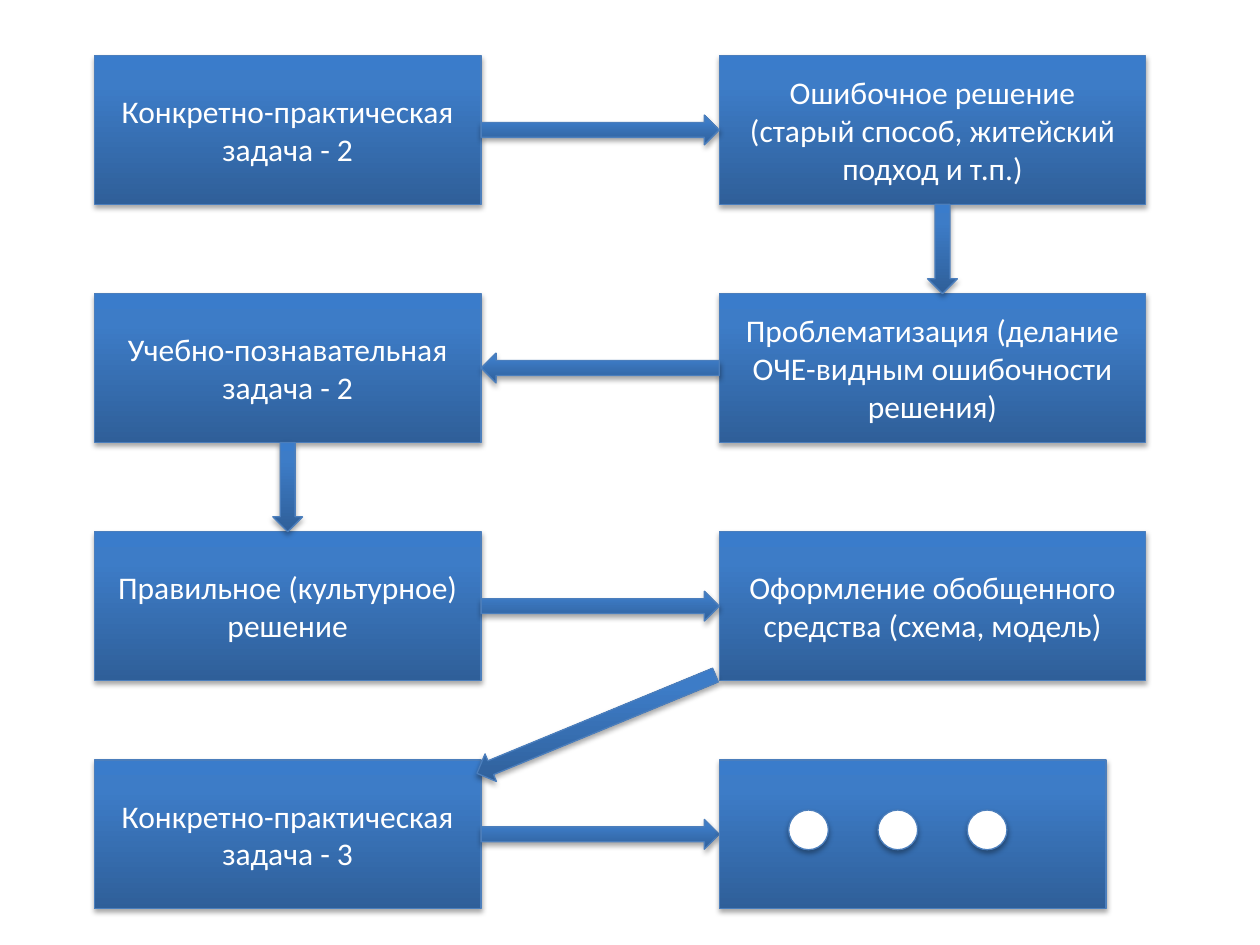
"""Build a slide with the cycle of learning tasks as boxes joined by block arrows."""
from dataclasses import dataclass

from lxml.etree import SubElement
from pptx import Presentation
from pptx.dml.color import RGBColor
from pptx.enum.shapes import MSO_SHAPE as Preset
from pptx.enum.text import MSO_ANCHOR as Anchor, PP_ALIGN as Align
from pptx.oxml import parse_xml
from pptx.oxml.ns import nsdecls, qn
from pptx.util import Cm, Pt

WHITE = RGBColor(0xFF, 0xFF, 0xFF)
BLACK = RGBColor(0x00, 0x00, 0x00)
OUTLINE = RGBColor(0x4B, 0x7E, 0xBC)
GRADIENT = (
    (0, RGBColor(0x2F, 0x5F, 0x99)),
    (80, RGBColor(0x3D, 0x7C, 0xC7)),
    (100, RGBColor(0x3A, 0x7C, 0xCB)),
)
FONT = "Calibri"
LEFT, RIGHT = 1.9, 14.5
NARROW, WIDE, BOX_HEIGHT = 7.8, 8.6, 3.0
ROWS = (1.12, 5.92, 10.72, 15.32)
THICKNESS = 0.6
GAP_LEFT = LEFT + NARROW
GAP_WIDTH = RIGHT - GAP_LEFT
DROP = ROWS[1] - ROWS[0] - BOX_HEIGHT
ARROW_OFFSET = (BOX_HEIGHT - THICKNESS) / 2
DOT_LEFT, DOT_TOP, DOT_SIZE, DOT_PITCH = 15.9, 16.33, 0.8, 1.8


@dataclass(frozen=True)
class Figure:
    preset: Preset
    left: float
    top: float
    width: float
    height: float
    lines: tuple[str, ...] = ()
    rotation: float = 0
    solid: bool = False


def left_box(row: int, text: str) -> Figure:
    return Figure(Preset.RECTANGLE, LEFT, ROWS[row], NARROW, BOX_HEIGHT, (text,))


def right_box(row: int, *lines: str, width: float = WIDE) -> Figure:
    return Figure(Preset.RECTANGLE, RIGHT, ROWS[row], width, BOX_HEIGHT, lines)


def across(row: int, preset: Preset) -> Figure:
    return Figure(preset, GAP_LEFT, ROWS[row] + ARROW_OFFSET, GAP_WIDTH, THICKNESS)


def down(row: int, left: float) -> Figure:
    return Figure(Preset.DOWN_ARROW, left, ROWS[row] + BOX_HEIGHT, THICKNESS, DROP)


def dot(index: int) -> Figure:
    left = DOT_LEFT + index * DOT_PITCH
    return Figure(Preset.OVAL, left, DOT_TOP, DOT_SIZE, DOT_SIZE, solid=True)


FIGURES = (
    left_box(0, "Конкретно-практическая задача - 2"),
    right_box(0, "Ошибочное решение", "(старый способ, житейский подход и т.п.)"),
    left_box(1, "Учебно-познавательная задача - 2"),
    right_box(1, "Проблематизация (делание ОЧЕ-видным ошибочности решения)"),
    left_box(2, "Правильное (культурное) решение"),
    right_box(2, "Оформление обобщенного средства (схема, модель)"),
    left_box(3, "Конкретно-практическая задача - 3"),
    across(0, Preset.RIGHT_ARROW),
    across(1, Preset.LEFT_ARROW),
    across(2, Preset.RIGHT_ARROW),
    down(0, 18.7),
    down(1, 5.5),
    Figure(Preset.LEFT_ARROW, 9.42, 14.3, 5.2, THICKNESS, rotation=337.6),
    across(3, Preset.RIGHT_ARROW),
    right_box(3, width=NARROW),
    *(dot(index) for index in range(3)),
)


def fill_gradient(shape) -> None:
    stops = "".join(
        f'<a:gs pos="{percent * 1000}"><a:srgbClr val="{color}"/></a:gs>'
        for percent, color in GRADIENT
    )
    gradient = parse_xml(
        f'<a:gradFill {nsdecls("a")} rotWithShape="0"><a:gsLst>{stops}</a:gsLst>'
        '<a:lin ang="16200000" scaled="0"/></a:gradFill>'
    )
    shape.fill.background()
    properties = shape.element.spPr
    properties.replace(properties.find(qn("a:noFill")), gradient)


def add_shadow(shape) -> None:
    shape.shadow.inherit = False
    effects = shape.element.spPr.find(qn("a:effectLst"))
    shadow = SubElement(
        effects, qn("a:outerShdw"), blurRad=str(Pt(3.1)), dist=str(Pt(1.8)),
        dir="5400000", rotWithShape="0",
    )
    color = SubElement(shadow, qn("a:srgbClr"), val=str(BLACK))
    SubElement(color, qn("a:alpha"), val="35000")


def write_lines(shape, lines: tuple[str, ...]) -> None:
    frame = shape.text_frame
    frame.word_wrap = True
    frame.vertical_anchor = Anchor.MIDDLE
    for index, line in enumerate(lines):
        para = frame.add_paragraph() if index else frame.paragraphs[0]
        para.alignment = Align.CENTER
        span = para.add_run()
        span.text = line
        span.font.name = FONT
        span.font.size = Pt(18)
        span.font.color.rgb = WHITE


def draw(page, figure: Figure) -> None:
    shape = page.shapes.add_shape(
        figure.preset, Cm(figure.left), Cm(figure.top), Cm(figure.width), Cm(figure.height)
    )
    shape.rotation = figure.rotation
    if figure.solid:
        shape.fill.solid()
        shape.fill.fore_color.rgb = WHITE
    else:
        fill_gradient(shape)
    shape.line.color.rgb = OUTLINE
    shape.line.width = Pt(0.75)
    add_shadow(shape)
    write_lines(shape, figure.lines)


def main() -> None:
    deck = Presentation()
    deck.slide_width, deck.slide_height = Cm(25.4), Cm(19.05)
    page = deck.slides.add_slide(deck.slide_layouts[6])
    for figure in FIGURES:
        draw(page, figure)
    deck.save("out.pptx")


if __name__ == "__main__":
    main()
